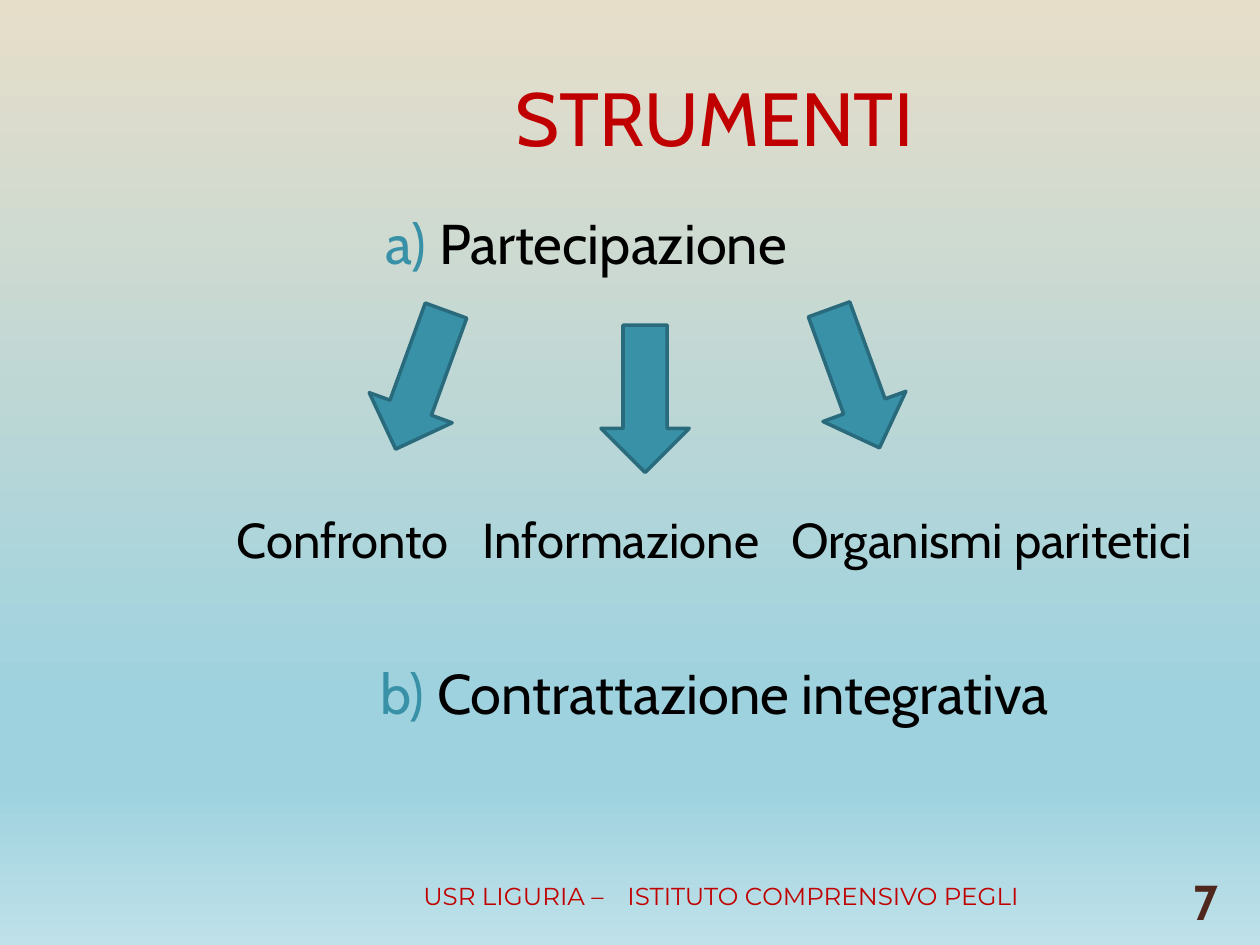
"""Build the STRUMENTI slide: participation tools and supplementary bargaining."""
import copy

import pptx
import pptx.dml.color
import pptx.enum.shapes
import pptx.enum.text
import pptx.util

Inches, Pt = pptx.util.Inches, pptx.util.Pt
ALIGN = pptx.enum.text.PP_ALIGN
MIDDLE = pptx.enum.text.MSO_ANCHOR.MIDDLE

WIDTH, HEIGHT = 10, 7.5
COLORS = {"red": "C00000", "teal": "3891A7", "outline": "296B7C",
          "text": "000000", "number": "4F271C"}
BACKDROP = [(0, "E7DEC9"), (0.74, "9ED2DF"), (0.83, "9ED2DF"), (1, "BFE1E9")]

TITLE = "STRUMENTI"
CONTENT = {"left": 1.57, "width": 8.2}
TOPICS = [("a) ", "Partecipazione", 3.06, 1.92),
          ("b) ", "Contrattazione integrativa", 3.02, 5.49)]
TOOLS = [("Confronto", 1.88), ("Informazione", 3.83), ("Organismi paritetici", 6.28)]
TOOLS_MIDDLE = 4.28
ARROWS = [(4.77, 2.58, 0), (6.43, 2.42, 340), (2.99, 2.43, 20)]
ARROW_SIZE = (0.7, 1.17)
FOOTER = [("USR LIGURIA –", 3.36), ("ISTITUTO COMPRENSIVO PEGLI", 4.98)]
FOOTER_MIDDLE = 7.11
PAGE = ("7", 9.22, 7.15, 0.7)
LINE_HEIGHT = 0.6


def rgb(name):
    return pptx.dml.color.RGBColor.from_string(COLORS.get(name, name))


def style(paragraph, size, color, face="Cabin", bold=False, align=ALIGN.LEFT):
    paragraph.alignment = align
    paragraph.font.size = Pt(size)
    paragraph.font.name = face
    paragraph.font.bold = bold
    paragraph.font.color.rgb = rgb(color)


def add_line(slide, text, left, middle, size, color, width=None, **look):
    box = slide.shapes.add_textbox(
        Inches(left), Inches(middle - LINE_HEIGHT / 2),
        Inches(width or WIDTH - left), Inches(LINE_HEIGHT))
    frame = box.text_frame
    frame.word_wrap = True
    frame.vertical_anchor = MIDDLE
    frame.margin_left = frame.margin_right = 0
    frame.margin_top = frame.margin_bottom = 0
    paragraph = frame.paragraphs[0]
    paragraph.add_run().text = text
    style(paragraph, size, color, **look)
    return paragraph


def paint_background(slide):
    fill = slide.background.fill
    fill.gradient()
    fill.gradient_angle = 270
    stop_list = fill.gradient_stops[0]._gs.getparent()
    for _ in BACKDROP[2:]:
        stop_list.append(copy.deepcopy(stop_list[0]))
    for stop, (position, color) in zip(fill.gradient_stops, BACKDROP):
        stop.position = position
        stop.color.rgb = rgb(color)


def add_title(slide):
    title = slide.shapes.title
    title.left, title.top = Inches(CONTENT["left"]), Inches(0.3)
    title.width, title.height = Inches(CONTENT["width"]), Inches(1.25)
    title.text_frame.text = TITLE
    title.text_frame.vertical_anchor = MIDDLE
    title.text_frame.auto_size = pptx.enum.text.MSO_AUTO_SIZE.NONE
    style(title.text_frame.paragraphs[0], 43, "red", align=ALIGN.CENTER)


def add_arrow(slide, left, top, rotation):
    arrow = slide.shapes.add_shape(
        pptx.enum.shapes.MSO_SHAPE.DOWN_ARROW,
        Inches(left), Inches(top), *map(Inches, ARROW_SIZE))
    arrow.rotation = rotation
    arrow.shadow.inherit = False
    arrow.fill.solid()
    arrow.fill.fore_color.rgb = rgb("teal")
    arrow.line.color.rgb = rgb("outline")
    arrow.line.width = Pt(2)


def main():
    deck = pptx.Presentation()
    deck.slide_width, deck.slide_height = Inches(WIDTH), Inches(HEIGHT)
    slide = deck.slides.add_slide(deck.slide_layouts.get_by_name("Title Only"))
    paint_background(slide)
    add_title(slide)
    for letter, topic, left, middle in TOPICS:
        heading = add_line(slide, letter, left, middle, 32, "text")
        heading.runs[0].font.color.rgb = rgb("teal")
        heading.add_run().text = topic
    for tool, left in TOOLS:
        add_line(slide, tool, left, TOOLS_MIDDLE, 28, "text")
    for part, left in FOOTER:
        add_line(slide, part, left, FOOTER_MIDDLE, 14, "red", face="Montserrat")
    number, left, middle, width = PAGE
    add_line(slide, number, left, middle, 28, "number", width,
             bold=True, align=ALIGN.CENTER)
    for arrow in ARROWS:
        add_arrow(slide, *arrow)
    deck.save("out.pptx")


if __name__ == "__main__":
    main()
